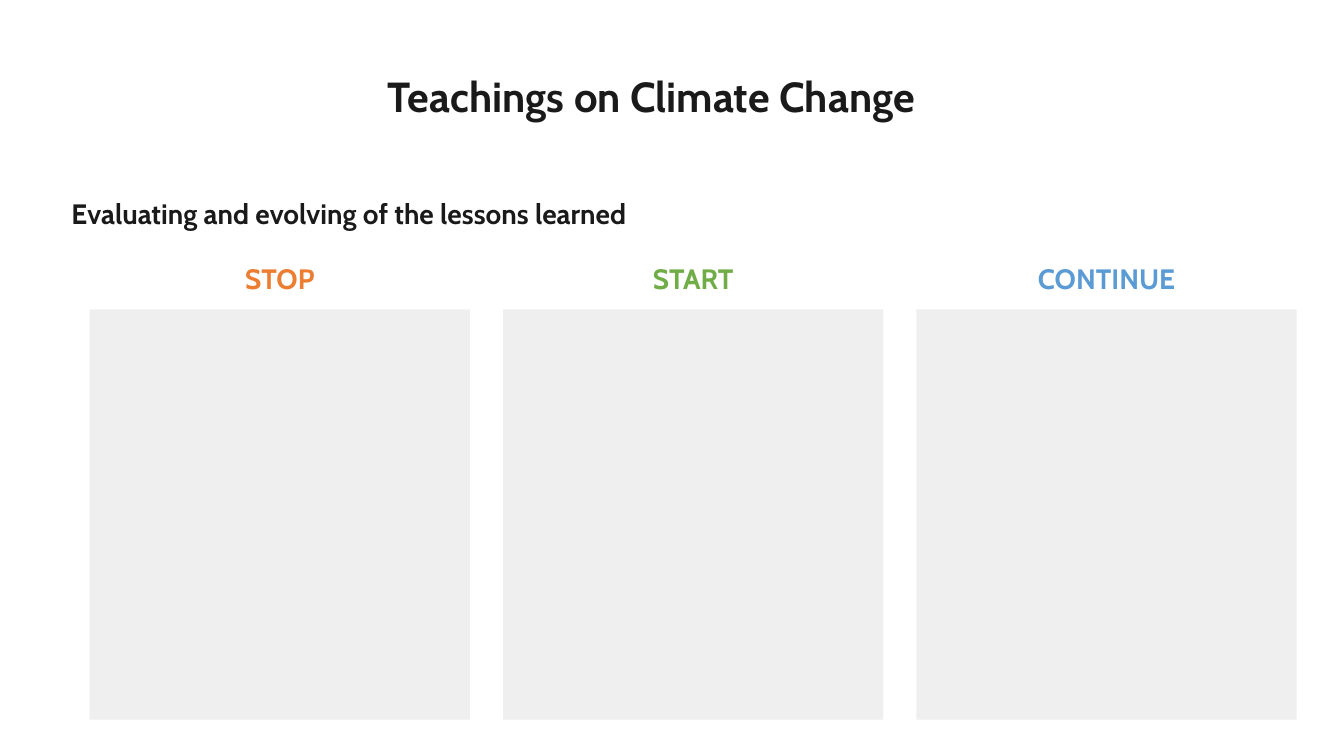
"""Build a stop, start, continue slide on climate change teachings."""
from dataclasses import dataclass

from pptx import Presentation
from pptx import util as u
from pptx.dml import color
from pptx.enum import shapes, text

PX = 9144


@dataclass(frozen=True)
class Theme:
    font: str = "Cabin"
    ink: str = "1A1A1A"
    panel: str = "EFEFEF"
    stop: str = "ED7D31"
    start: str = "70AD47"
    proceed: str = "5B9BD5"
    title_pt: int = 30
    body_pt: int = 20


@dataclass(frozen=True)
class Box:
    left: int
    top: int
    width: int
    height: int

    def emu(self) -> list[u.Emu]:
        return [u.Emu(n * PX) for n in (self.left, self.top, self.width, self.height)]


@dataclass(frozen=True)
class Column:
    label: str
    colour: str


THEME = Theme()
COLUMNS = [
    Column("STOP", THEME.stop),
    Column("START", THEME.start),
    Column("CONTINUE", THEME.proceed),
]
TITLE = Box(207, 45, 878, 107)
SUBTITLE = Box(61, 194, 837, 64)
PANEL = Box(89, 307, 377, 407)
PITCH = 410
LABEL_TOP, LABEL_HEIGHT, LABEL_OVERHANG = 258, 49, 10


def write(sp, words: str, size: int, colour: str, align, anchor) -> None:
    tf = sp.text_frame
    frame = {
        "word_wrap": True,
        "auto_size": text.MSO_AUTO_SIZE.NONE,
        "vertical_anchor": anchor,
    }
    for name, value in frame.items():
        setattr(tf, name, value)
    p = tf.paragraphs[0]
    for name, value in {"alignment": align, "line_spacing": 0.9}.items():
        setattr(p, name, value)
    r = p.add_run()
    r.text = words
    for name, value in {"name": THEME.font, "size": u.Pt(size), "bold": True}.items():
        setattr(r.font, name, value)
    r.font.color.rgb = color.RGBColor.from_string(colour)


def add_title(s, words: str) -> None:
    sp = s.shapes.title
    for name, value in zip(("left", "top", "width", "height"), TITLE.emu()):
        setattr(sp, name, value)
    write(sp, words, THEME.title_pt, THEME.ink, text.PP_ALIGN.CENTER, text.MSO_ANCHOR.MIDDLE)


def add_label(s, box: Box, words: str, colour: str, align) -> None:
    sp = s.shapes.add_textbox(*box.emu())
    write(sp, words, THEME.body_pt, colour, align, text.MSO_ANCHOR.TOP)


def add_panel(s, box: Box) -> None:
    sp = s.shapes.add_shape(shapes.MSO_SHAPE.RECTANGLE, *box.emu())
    sp.shadow.inherit = False
    sp.fill.solid()
    sp.fill.fore_color.rgb = color.RGBColor.from_string(THEME.panel)
    sp.line.fill.background()


def add_column(s, index: int, column: Column) -> None:
    left = PANEL.left + index * PITCH
    label = Box(left - LABEL_OVERHANG, LABEL_TOP, PANEL.width + 2 * LABEL_OVERHANG, LABEL_HEIGHT)
    add_label(s, label, column.label, column.colour, text.PP_ALIGN.CENTER)
    add_panel(s, Box(left, PANEL.top, PANEL.width, PANEL.height))


def main() -> None:
    prs = Presentation()
    prs.slide_width, prs.slide_height = u.Emu(1333 * PX), u.Emu(750 * PX)
    s = prs.slides.add_slide(prs.slide_layouts.get_by_name("Title Only"))
    add_title(s, "Teachings on Climate Change")
    add_label(
        s, SUBTITLE, "Evaluating and evolving of the lessons learned",
        THEME.ink, text.PP_ALIGN.LEFT,
    )
    for index, column in enumerate(COLUMNS):
        add_column(s, index, column)
    prs.save("out.pptx")


if __name__ == "__main__":
    main()
